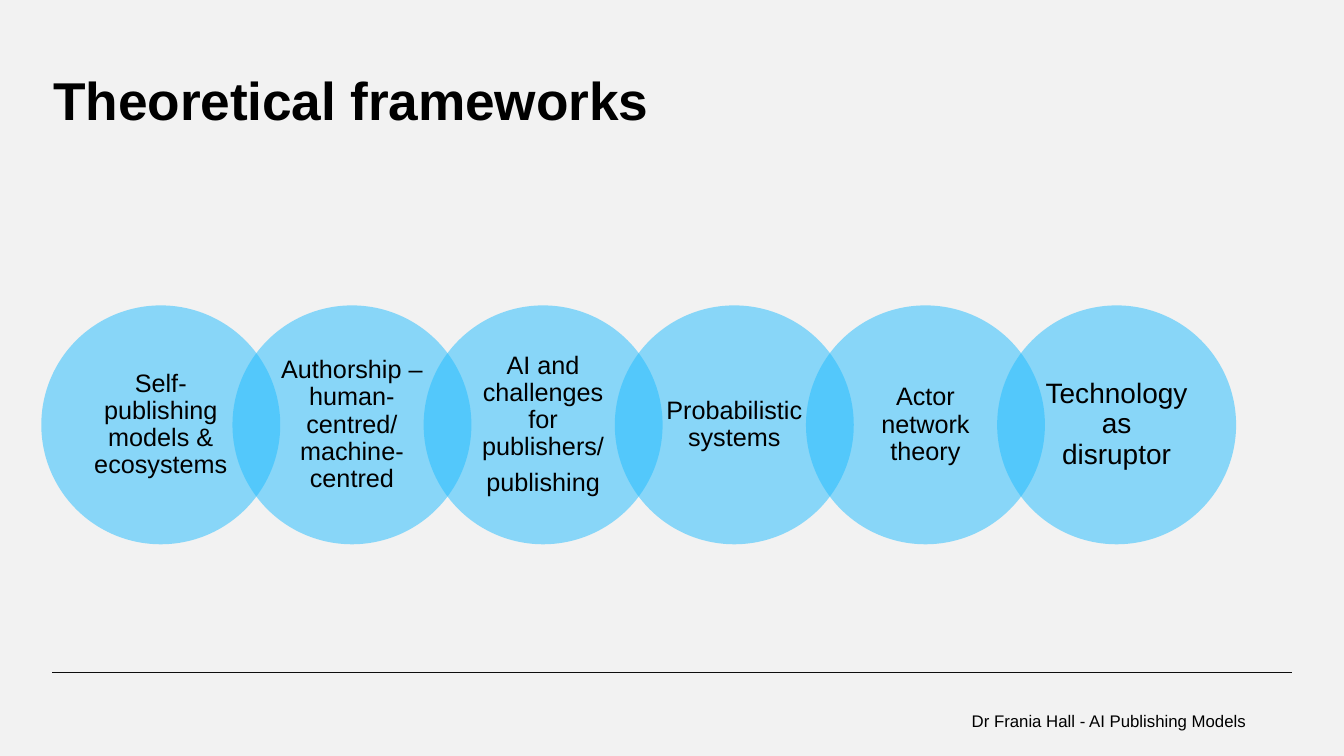
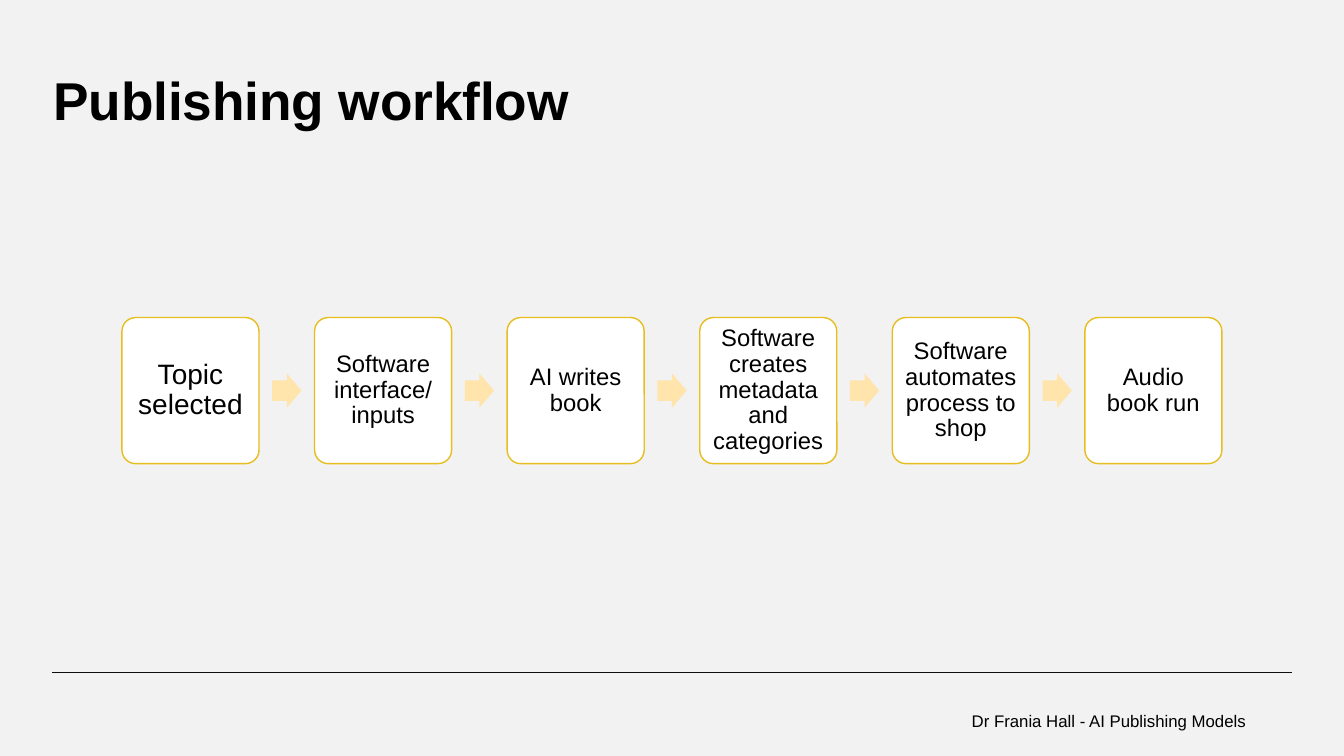
from dataclasses import dataclass

from lxml import etree
from pptx import Presentation
from pptx import util as u
from pptx.dml.color import RGBColor
from pptx.enum import shapes, text
from pptx.oxml import ns


@dataclass(frozen=True)
class Theme:
    font: str = "Arial"
    background: str = "F2F2F2"
    ink: str = "000000"
    rule: str = "0D0D0D"
    circle: str = "20BCFF"
    card: str = "FFFFFF"
    card_border: str = "E7BD1F"
    arrow: str = "FFE4AC"
    title_size: int = 38
    lead_size: int = 20
    circle_size: int = 18
    card_size: int = 17
    footer_size: int = 12


class Deck:
    """Holds the theme and the slide being drawn."""

    footer_text = "Dr Frania Hall - AI Publishing Models"

    def __init__(self, theme):
        self.theme = theme
        self.presentation = Presentation()
        self.presentation.slide_width = u.Inches(13.33)
        self.presentation.slide_height = u.Inches(7.5)
        self.paint(self.presentation.slide_master.background, theme.background)
        self.slide = None

    def paint(self, item, color):
        item.fill.solid()
        item.fill.fore_color.rgb = RGBColor.from_string(color)

    def add_slide(self, title):
        """Start a slide with its title, rule and footer."""
        layout = self.presentation.slide_layouts[6]
        self.slide = self.presentation.slides.add_slide(layout)
        self.rule(0.52, 12.81, 6.67)
        heading = self.text_box(0.53, 0.52, 12.28, 0.79)
        self.set_text(heading, [title], self.theme.title_size, text.PP_ALIGN.LEFT,
                      anchor=text.MSO_ANCHOR.BOTTOM, bold=True)
        title_run = heading.text_frame.paragraphs[0].runs[0]
        title_run._r.get_or_add_rPr().set("spc", "-10")
        footer = self.text_box(3.64, 6.95, 8.72, 0.4)
        self.set_text(footer, [self.footer_text], self.theme.footer_size,
                      text.PP_ALIGN.RIGHT, line_spacing=1.0)

    def rule(self, left, right, top):
        line = self.slide.shapes.add_connector(
            shapes.MSO_CONNECTOR.STRAIGHT,
            u.Inches(left), u.Inches(top), u.Inches(right), u.Inches(top))
        line.line.color.rgb = RGBColor.from_string(self.theme.rule)
        line.line.width = u.Pt(0.25)
        etree.SubElement(line._element.spPr, ns.qn("a:effectLst"))

    def text_box(self, left, top, width, height):
        return self.slide.shapes.add_textbox(
            u.Inches(left), u.Inches(top), u.Inches(width), u.Inches(height))

    def set_text(self, shape, lines, size, align, anchor=text.MSO_ANCHOR.MIDDLE,
                 inset=(0, 0), line_spacing=0.9, space_after=0, bold=False):
        frame = shape.text_frame
        frame.word_wrap = True
        frame.vertical_anchor = anchor
        frame.margin_left = frame.margin_right = u.Inches(inset[0])
        frame.margin_top = frame.margin_bottom = u.Inches(inset[1])
        frame.text = "\n".join(lines)
        for paragraph in frame.paragraphs:
            paragraph.alignment = align
            paragraph.line_spacing = line_spacing
            paragraph.space_after = u.Pt(space_after)
            paragraph.font.name = self.theme.font
            paragraph.font.size = u.Pt(size)
            paragraph.font.bold = bold
            paragraph.font.color.rgb = RGBColor.from_string(self.theme.ink)

    def shape(self, kind, left, top, width, height, fill, border=None):
        shape = self.slide.shapes.add_shape(
            kind, u.Inches(left), u.Inches(top), u.Inches(width), u.Inches(height))
        shape.shadow.inherit = False
        self.paint(shape, fill)
        if border:
            shape.line.color.rgb = RGBColor.from_string(border)
            shape.line.width = u.Pt(1)
        else:
            shape.line.fill.background()
        return shape

    def label(self, shape, lines, size, inset):
        self.set_text(shape, lines, size, text.PP_ALIGN.CENTER, inset=inset,
                      space_after=0.35 * size)

    def circle(self, left, top, diameter, lines, size):
        circle = self.shape(shapes.MSO_SHAPE.OVAL, left, top, diameter, diameter,
                            self.theme.circle)
        color = circle._element.spPr.find(ns.qn("a:solidFill"))[0]
        etree.SubElement(color, ns.qn("a:alpha"), val="50000")
        self.label(circle, lines, size, (0.13, 0.03))

    def card(self, left, top, width, height, caption, size):
        card = self.shape(shapes.MSO_SHAPE.ROUNDED_RECTANGLE, left, top, width,
                          height, self.theme.card, self.theme.card_border)
        card.adjustments[0] = 0.1
        self.label(card, [caption], size, (0.07, 0.07))

    def arrow(self, left, top, width, height):
        arrow = self.shape(shapes.MSO_SHAPE.RIGHT_ARROW, left, top, width, height,
                           self.theme.arrow)
        arrow.adjustments[0] = 0.6
        arrow.adjustments[1] = 0.5


def frameworks_slide(deck):
    deck.add_slide("Theoretical frameworks")
    theme = deck.theme
    frameworks = [
        ["Self-publishing models & ecosystems"],
        ["Authorship – human-centred/ machine-centred"],
        ["AI and challenges for publishers/", "publishing"],
        ["Probabilistic systems"],
        ["Actor network theory"],
        ["Technology as disruptor"],
    ]
    # Each circle overlaps the one before by a fifth
    diameter = 2.37
    last = len(frameworks) - 1
    for index, lines in enumerate(frameworks):
        size = theme.lead_size if index == last else theme.circle_size
        deck.circle(0.41 + index * 0.8 * diameter, 3.03, diameter, lines, size)


def workflow_slide(deck):
    deck.add_slide("Publishing workflow")
    theme = deck.theme
    steps = [
        "Topic selected",
        "Software interface/ inputs",
        "AI writes book",
        "Software creates metadata and categories",
        "Software automates process to shop",
        "Audio book run",
    ]
    # Cards at an equal pitch, with an arrow centred in each gap
    top, width, height, pitch = 3.15, 1.36, 1.45, 1.91
    arrow_width, arrow_height = 0.29, 0.34
    for index, step in enumerate(steps):
        left = 1.21 + index * pitch
        if index:
            deck.arrow(left - (pitch - width + arrow_width) / 2,
                       top + (height - arrow_height) / 2,
                       arrow_width, arrow_height)
        size = theme.card_size if index else theme.lead_size
        deck.card(left, top, width, height, step, size)


def main():
    deck = Deck(Theme())
    frameworks_slide(deck)
    workflow_slide(deck)
    deck.presentation.save("out.pptx")


if __name__ == "__main__":
    main()
